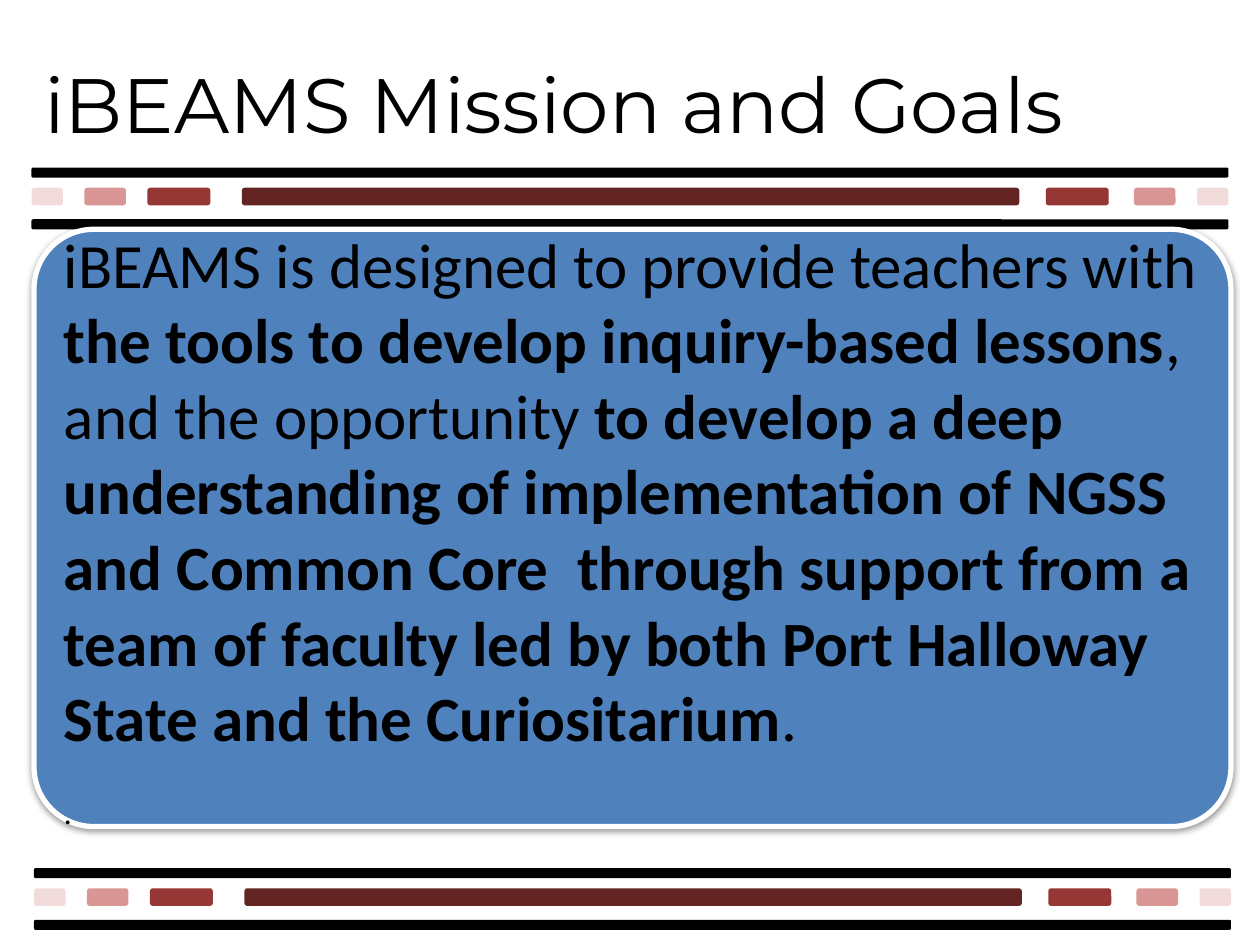
from lxml import etree
from pptx import Presentation
from pptx.dml.color import RGBColor
from pptx.enum.shapes import MSO_SHAPE
from pptx.enum.text import MSO_ANCHOR, PP_ALIGN
from pptx.oxml.ns import qn
from pptx.util import Inches, Pt

ROUNDED = MSO_SHAPE.ROUNDED_RECTANGLE
LEFT = PP_ALIGN.LEFT
TOP, MIDDLE = MSO_ANCHOR.TOP, MSO_ANCHOR.MIDDLE

# Content
TITLE = "iBEAMS Mission and Goals"
MISSION = [  # (text, bold)
    ("iBEAMS is designed to provide teachers with ", False),
    ("the tools to develop inquiry-based lessons", True),
    (", and the opportunity ", False),
    ("to develop a deep understanding of implementation of NGSS and Common Core  "
     "through support from a team of faculty led by both Port Halloway State "
     "and the Curiositarium", True),
    (".", False),
]
CLOSING = "."

# Theme
THEME = {
    "text": "000000", "rule": "000000", "panel": "4F81BD", "outline": "FFFFFF",
    "dark": "632523", "medium": "953735", "light": "D99694", "pale": "F2DCDB",
    "title_font": "Montserrat", "body_font": "Calibri",
    "title_size": 44, "body_size": 36, "small_size": 18,
}

# Decorative band: dashes as (left, width, colour), measured from the band's left
DASHES = [
    (1.67, 6.17, "dark"), (8.05, 0.5, "medium"), (0.92, 0.5, "medium"),
    (0.42, 0.33, "light"), (0, 0.25, "pale"),
    (8.75, 0.33, "light"), (9.25, 0.25, "pale"),
]
BAND_WIDTH, RULE_HEIGHT, DASH_HEIGHT = 9.5, 0.08, 0.14
DASH_OFFSET, RULE_GAP = 0.16, 0.41
BANDS = [(0.25, 1.33), (0.27, 6.89)]


def color(name):
    return RGBColor.from_string(THEME[name])


def add_rounded(slide, left, top, width, height, fill):
    shape = slide.shapes.add_shape(
        ROUNDED, Inches(left), Inches(top), Inches(width), Inches(height))
    shape.shadow.inherit = False
    shape.fill.solid()
    shape.fill.fore_color.rgb = color(fill)
    shape.line.fill.background()
    return shape


def add_band(slide, left, top):
    for offset, width, fill in DASHES:
        add_rounded(slide, left + offset, top + DASH_OFFSET, width, DASH_HEIGHT, fill)
    for offset in (RULE_GAP, 0):
        add_rounded(slide, left, top + offset, BAND_WIDTH, RULE_HEIGHT, "rule")


def add_span(para, text, font, size, bold=False):
    span = para.add_run()
    span.text = text
    span.font.name = THEME[font]
    span.font.size = Pt(THEME[size])
    span.font.bold = bold
    span.font.color.rgb = color("text")


def add_soft_shadow(shape):
    effects = shape._element.spPr.find(qn("a:effectLst"))
    shadow = etree.SubElement(
        effects, qn("a:outerShdw"), blurRad=str(Pt(3.1)), dist=str(Pt(1.6)),
        dir="5400000", rotWithShape="0")
    tint = etree.SubElement(shadow, qn("a:srgbClr"), val="000000")
    etree.SubElement(tint, qn("a:alpha"), val="38000")


deck = Presentation()
deck.slide_width, deck.slide_height = Inches(10), Inches(7.5)
slide = deck.slides.add_slide(deck.slide_layouts[5])

# Bands above and below the panel
for left, top in BANDS:
    add_band(slide, left, top)

# Mission panel
panel = add_rounded(slide, 0.27, 1.82, 9.5, 4.74, "panel")
panel.adjustments[0] = 0.1
panel.line.color.rgb = color("outline")
panel.line.width = Pt(3)
add_soft_shadow(panel)
frame = panel.text_frame
frame.word_wrap = True
frame.vertical_anchor = MIDDLE
para = frame.paragraphs[0]
para.alignment = LEFT
for text, bold in MISSION:
    add_span(para, text, "body_font", "body_size", bold)
para = frame.add_paragraph()
para.alignment = LEFT
para.space_before = Pt(22)
add_span(para, CLOSING, "body_font", "small_size")

# Title
title = slide.shapes.title
title.left, title.top = Inches(0.25), Inches(0.4)
title.width, title.height = Inches(9.52), Inches(0.84)
title.text_frame.word_wrap = True
title.text_frame.vertical_anchor = TOP
para = title.text_frame.paragraphs[0]
para.alignment = LEFT
add_span(para, TITLE, "title_font", "title_size")

deck.save("out.pptx")
